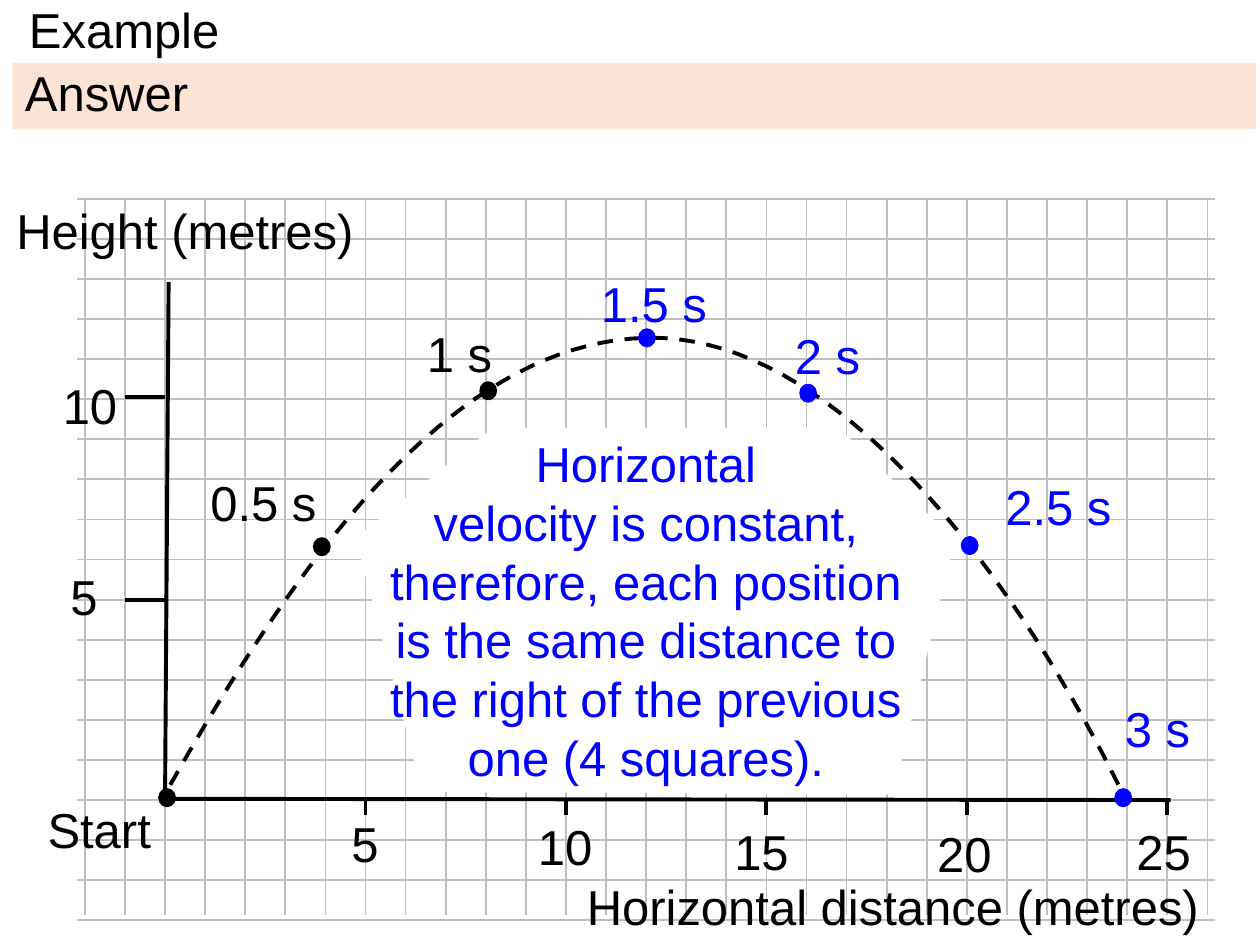
import dataclasses

import pptx
import pptx.dml.color
import pptx.enum.dml
import pptx.enum.shapes
import pptx.enum.text
import pptx.oxml
import pptx.oxml.ns
import pptx.util


@dataclasses.dataclass(frozen=True)
class Theme:
    font: str = "Arial"
    size: int = 28
    ink: str = "000000"
    answer: str = "0000FF"
    grid: str = "BFBFBF"
    band: str = "FBE3D6"
    paper: str = "FFFFFF"
    thin: float = 1
    thick: float = 2.25


THEME = Theme()
WIDTH, HEIGHT = pptx.util.Inches(10), pptx.util.Inches(7.5)

# One grid square is one metre; the origin is where the axes meet
SQUARE = pptx.util.Inches(3.5 / 11)
ORIGIN_X, ORIGIN_Y = pptx.util.Inches(1.31), pptx.util.Inches(6.35)
FIRST_COLUMN, LAST_COLUMN = -2, 26
FIRST_ROW, LAST_ROW = -3, 15

# Column, row and colour of each marked position, every half second
POSITIONS = [
    (0.05, 0.06, THEME.ink), (3.91, 6.32, THEME.ink), (8.06, 10.21, THEME.ink),
    (12.02, 11.53, THEME.answer), (16.04, 10.15, THEME.answer),
    (20.07, 6.35, THEME.answer), (23.9, 0.06, THEME.answer),
]

# Text, left column, top row, width in columns
AXIS_LABELS = [
    ("5", 4.34, -0.19, 1.32), ("10", 8.99, -0.25, 2.01), ("15", 13.89, -0.38, 2.01),
    ("20", 18.95, -0.44, 2.01), ("25", 23.92, -0.38, 2.01),
    ("5", -2.67, 5.97, 1.32), ("10", -2.86, 10.75, 2.01),
    ("Height (metres)", -4.02, 15.12, 9.15),
    ("Horizontal distance (metres)", 10.21, -1.76, 16.5),
    ("Start", -3.24, 0.16, 3.24),
]
GIVEN_TIMES = [("0.5 s", 0.82, 8.33, 3.3), ("1 s", 6.22, 12.04, 2.29)]
ANSWER_TIMES = [
    ("1.5 s", 10.56, 13.29, 3.3), ("2 s", 15.4, 12, 2.29),
    ("2.5 s", 20.65, 8.23, 3.3), ("3 s", 23.63, 2.7, 2.29),
]

# Two cubic curves that share the top of the flight
FLIGHT = [
    [(0.13, 0.38), (2.92, 5.28), (6.91, 11.44), (12.04, 11.53)],
    [(12.04, 11.53), (17.16, 11.63), (21.81, 4.49), (23.95, 0.03)],
]
PATCH = [(6.41, 0.44), (4.81, 6.51), (8.2, 9.24), (16.78, 9.24),
         (19.64, 6.47), (18.13, 0.19), (6.51, 0.25)]
EXPLANATION = (
    "Horizontal\vvelocity is constant, therefore, each position is the same "
    "distance to the right of the previous one (4 squares)."
)


def color(value):
    return pptx.dml.color.RGBColor.from_string(value)


def grid_point(column, row):
    return round(ORIGIN_X + column * SQUARE), round(ORIGIN_Y - row * SQUARE)


def style_line(line, line_color, width):
    line.color.rgb = color(line_color)
    line.width = pptx.util.Pt(width)


def write(text_frame, text, text_color=THEME.ink, alignment=pptx.enum.text.PP_ALIGN.LEFT):
    paragraph = text_frame.paragraphs[0]
    paragraph.text = text
    paragraph.alignment = alignment
    paragraph.font.name = THEME.font
    paragraph.font.size = pptx.util.Pt(THEME.size)
    paragraph.font.color.rgb = color(text_color)
    return paragraph


def add_line(shapes, start, end, line_color=THEME.ink, width=THEME.thick):
    line = shapes.add_connector(
        pptx.enum.shapes.MSO_CONNECTOR.STRAIGHT, *grid_point(*start), *grid_point(*end))
    style_line(line.line, line_color, width)
    effects = pptx.oxml.parse_xml(f"<a:effectLst {pptx.oxml.ns.nsdecls('a')}/>")
    line._element.spPr.append(effects)


def add_outline(shapes, points, line_color, fill_color=None):
    corners = [grid_point(*point) for point in points]
    builder = shapes.build_freeform(*corners[0])
    builder.add_line_segments(corners[1:], close=fill_color is not None)
    shape = builder.convert_to_shape()
    shape.shadow.inherit = False
    style_line(shape.line, line_color, THEME.thick)
    if fill_color:
        shape.fill.solid()
        shape.fill.fore_color.rgb = color(fill_color)
    else:
        shape.fill.background()
    return shape


def add_dot(shapes, column, row, dot_color):
    x, y = grid_point(column, row)
    width, height = pptx.util.Inches(0.11), pptx.util.Inches(0.12)
    dot = shapes.add_shape(pptx.enum.shapes.MSO_SHAPE.OVAL,
                           x - width // 2, y - height // 2, width, height)
    dot.shadow.inherit = False
    dot.fill.solid()
    dot.fill.fore_color.rgb = color(dot_color)
    style_line(dot.line, dot_color, THEME.thick)


def add_label(shapes, text, column, row, columns, text_color=THEME.ink, rows=1.79,
              wrap=False, alignment=pptx.enum.text.PP_ALIGN.LEFT):
    box = shapes.add_textbox(*grid_point(column, row),
                             round(columns * SQUARE), round(rows * SQUARE))
    box.text_frame.word_wrap = wrap
    paragraph = write(box.text_frame, text, text_color, alignment)
    paragraph.space_after = pptx.util.Pt(12)


def curve_points(controls, steps=40):
    points = []
    for step in range(steps + 1):
        t = step / steps
        weights = ((1 - t) ** 3, 3 * t * (1 - t) ** 2, 3 * t * t * (1 - t), t ** 3)
        points.append(tuple(sum(weight * control[axis]
                                for weight, control in zip(weights, controls))
                            for axis in (0, 1)))
    return points


def add_headings(slide):
    title = slide.shapes.title
    title.left, title.top = round(WIDTH * 0.013), 0
    title.width, title.height = round(WIDTH * 0.72), round(HEIGHT * 0.07)
    band = slide.shapes.add_shape(
        pptx.enum.shapes.MSO_SHAPE.RECTANGLE, round(WIDTH * 0.01), round(HEIGHT / 15),
        round(WIDTH * 0.99) - round(WIDTH * 0.003), round(HEIGHT * 0.07))
    band.shadow.inherit = False
    band.fill.solid()
    band.fill.fore_color.rgb = color(THEME.band)
    band.line.fill.background()
    for shape, text in ((title, "Example"), (band, "Answer")):
        shape.text_frame.auto_size = pptx.enum.text.MSO_AUTO_SIZE.NONE
        shape.text_frame.vertical_anchor = pptx.enum.text.MSO_ANCHOR.MIDDLE
        write(shape.text_frame, text).line_spacing = 0.9


def add_squares(slide):
    shapes = slide.shapes.add_group_shape().shapes
    for column in range(FIRST_COLUMN, LAST_COLUMN + 1):
        add_line(shapes, (column, FIRST_ROW + 0.14), (column, LAST_ROW),
                 THEME.grid, THEME.thin)
    for row in range(FIRST_ROW, LAST_ROW + 1):
        add_line(shapes, (FIRST_COLUMN - 0.2, row), (LAST_COLUMN + 0.2, row),
                 THEME.grid, THEME.thin)


def add_axes(shapes):
    add_outline(shapes, [(0.09, 12.92), (0, 0.03), (25.08, 0)], THEME.ink)
    for column in range(5, 26, 5):
        add_line(shapes, (column, 0), (column, -0.38))
    for row in (5, 10.06):
        add_line(shapes, (-1, row), (0, row))


def main():
    presentation = pptx.Presentation()
    presentation.slide_width, presentation.slide_height = WIDTH, HEIGHT
    slide = presentation.slides.add_slide(presentation.slide_layouts[5])
    shapes = slide.shapes

    # Background squares and headings
    add_squares(slide)
    add_headings(slide)

    # Flight path, axes and marked positions
    first_half, second_half = map(curve_points, FLIGHT)
    flight = add_outline(shapes, first_half + second_half[1:], THEME.ink)
    flight.line.dash_style = pptx.enum.dml.MSO_LINE.DASH
    add_axes(shapes)
    for position in POSITIONS:
        add_dot(shapes, *position)

    # Labels
    for label in AXIS_LABELS + GIVEN_TIMES:
        add_label(shapes, *label)
    for label in ANSWER_TIMES:
        add_label(shapes, *label, text_color=THEME.answer)

    # Explanation on a plain patch under the curve
    add_outline(shapes, PATCH, THEME.paper, THEME.paper)
    add_label(shapes, EXPLANATION, 4.78, 9.3, 14.42, THEME.answer, rows=9.21,
              wrap=True, alignment=pptx.enum.text.PP_ALIGN.CENTER)
    presentation.save("out.pptx")


if __name__ == "__main__":
    main()
